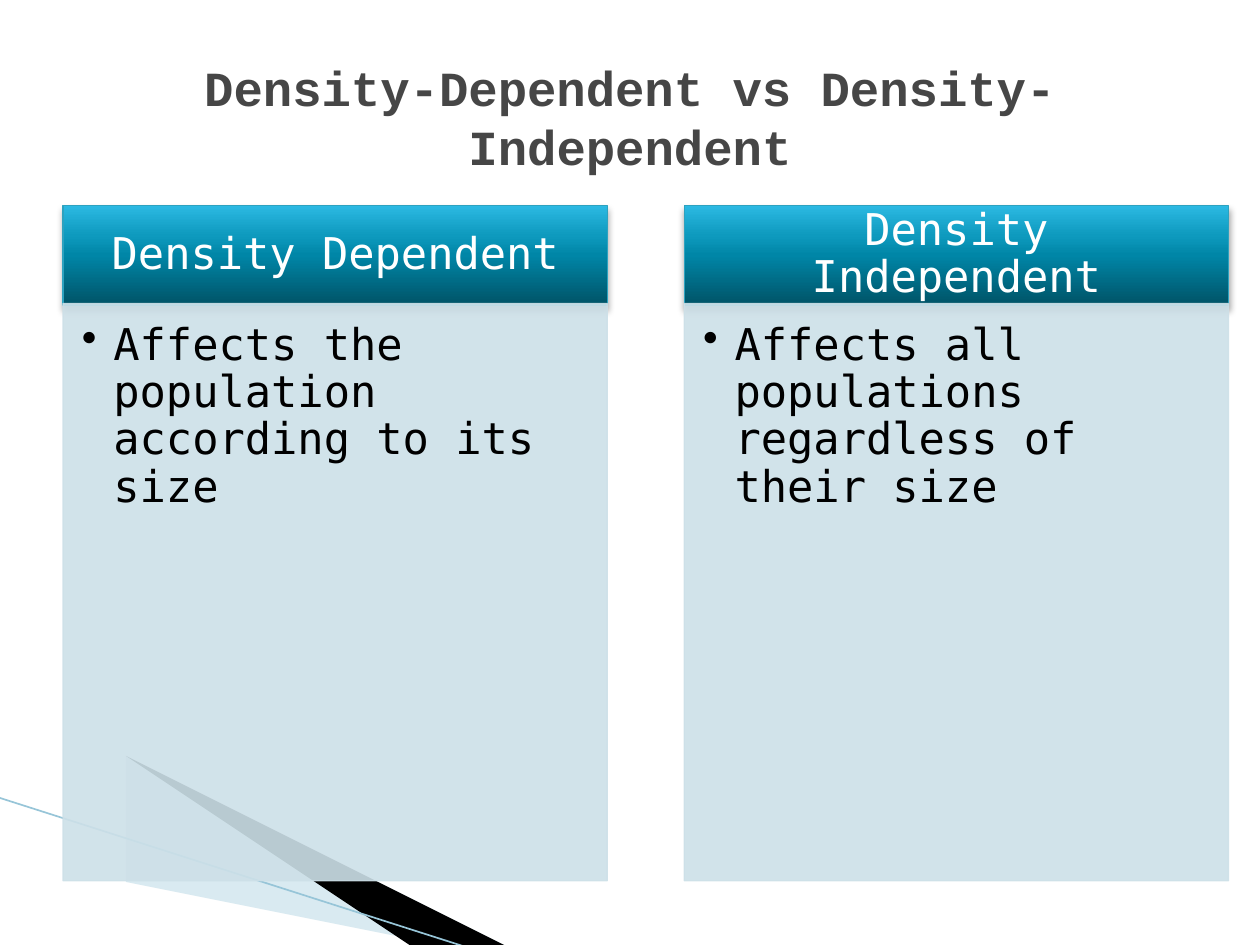
from dataclasses import dataclass

from lxml import etree
from pptx import Presentation, util as u
from pptx.dml.color import RGBColor
from pptx.enum import shapes, text
from pptx.oxml.ns import qn

WIDTH, HEIGHT = 10, 7.5
MONO = "DejaVu Sans Mono"

# Column grid, in inches
COLUMN_LEFT, COLUMN_STEP, COLUMN_WIDTH = 0.5, 4.93, 4.32
HEADER_TOP, HEADER_HEIGHT = 1.63, 0.79
BODY_TOP, BODY_HEIGHT = 2.41, 4.58
HEADER_STOPS = [(0, "005367"), (50, "0086A7"), (70, "0E9ABE"), (100, "2CB9E3")]


@dataclass
class Column:
    heading: str
    point: str


COLUMNS = [
    Column("Density Dependent", "Affects the population according to its size"),
    Column("Density Independent", "Affects all populations regardless of their size"),
]


def colour(value: str) -> RGBColor:
    return RGBColor.from_string(value)


def add_node(parent, tag: str, **attributes):
    return etree.SubElement(
        parent, qn(tag), {name: str(value) for name, value in attributes.items()})


def set_alpha(parent, percent: int) -> None:
    """Make the solid colour found inside parent partly transparent."""
    for node in parent.iter(qn("a:srgbClr")):
        add_node(node, "a:alpha", val=percent * 1000)


def set_gradient(shape, stops: list, angle: int) -> None:
    shape.fill.solid()
    solid = shape.element.spPr.find(qn("a:solidFill"))
    gradient = etree.Element(qn("a:gradFill"), rotWithShape="1")
    stop_list = add_node(gradient, "a:gsLst")
    for position, value in stops:
        stop = add_node(stop_list, "a:gs", pos=position * 1000)
        add_node(stop, "a:srgbClr", val=value)
    add_node(gradient, "a:lin", ang=angle * 60000, scaled=0)
    shape.element.spPr.replace(solid, gradient)


def set_shadow(shape) -> None:
    effects = shape.element.spPr.find(qn("a:effectLst"))
    shadow = add_node(effects, "a:outerShdw", blurRad=u.Pt(4), dist=u.Pt(3),
                      dir=90 * 60000, algn="ctr", rotWithShape=0)
    add_node(shadow, "a:srgbClr", val="000000")
    set_alpha(shadow, 35)


def write(shape, words: str, *, size: float, font: str, color: str,
          bold: bool = False, align=text.PP_ALIGN.CENTER,
          anchor=text.MSO_ANCHOR.MIDDLE, insets=(0.1, 0.05, 0.1, 0.05),
          spacing: float = 1.0, bullet: bool = False) -> None:
    frame = shape.text_frame
    frame.word_wrap = True
    frame.vertical_anchor = anchor
    (frame.margin_left, frame.margin_top,
     frame.margin_right, frame.margin_bottom) = map(u.Inches, insets)
    paragraph = frame.paragraphs[0]
    paragraph.alignment = align
    paragraph.line_spacing = spacing
    if bullet:
        properties = paragraph._p.get_or_add_pPr()
        properties.set("marL", str(u.Inches(0.25)))
        properties.set("indent", str(u.Inches(-0.25)))
        add_node(properties, "a:buChar", char="•")
    run = paragraph.add_run()
    run.text = words
    run.font.size, run.font.name, run.font.bold = u.Pt(size), font, bold
    run.font.color.rgb = colour(color)


def add_box(slide, left: float, top: float, height: float, line: str):
    shape = slide.shapes.add_shape(
        shapes.MSO_SHAPE.RECTANGLE, u.Inches(left), u.Inches(top),
        u.Inches(COLUMN_WIDTH), u.Inches(height))
    shape.shadow.inherit = False
    shape.line.color.rgb = colour(line)
    shape.line.width = u.Pt(0.75)
    return shape


def add_wedge(slide, points: list, fill: str, alpha: int = 100) -> None:
    builder = slide.shapes.build_freeform(*points[0], scale=u.Inches(1))
    builder.add_line_segments(points[1:], close=True)
    shape = builder.convert_to_shape()
    shape.shadow.inherit = False
    shape.fill.solid()
    shape.fill.fore_color.rgb = colour(fill)
    shape.line.fill.background()
    if alpha < 100:
        set_alpha(shape.element.spPr, alpha)


def add_corner(slide) -> None:
    add_wedge(slide, [(0.55, 6.51), (5.95, 7.51), (4.56, 7.51), (0.55, 6.5)],
              "A0CBDC", 40)
    add_wedge(slide, [(0.53, 6.49), (4.57, 7.51), (3.72, 7.52), (0.54, 6.5)],
              "000000")
    line = slide.shapes.add_connector(
        shapes.MSO_CONNECTOR.STRAIGHT,
        *map(u.Inches, (-0.01, 6.33, 3.71, 7.52)))
    line.line.color.rgb = colour("97C5D8")
    line.line.width = u.Pt(0.95)
    add_node(line.element.spPr, "a:effectLst")


def add_column(slide, index: int, column: Column) -> None:
    left = COLUMN_LEFT + index * COLUMN_STEP
    header = add_box(slide, left, HEADER_TOP, HEADER_HEIGHT, "2DA2BF")
    set_gradient(header, HEADER_STOPS, 270)
    set_shadow(header)
    write(header, column.heading, size=25, font=MONO, color="FFFFFF",
          insets=(0.19, 0.11, 0.19, 0.11), spacing=0.9)

    body = add_box(slide, left, BODY_TOP, BODY_HEIGHT, "CDE0E8")
    body.fill.solid()
    body.fill.fore_color.rgb = colour("CDE0E8")
    set_alpha(body.element.spPr, 90)
    write(body, column.point, size=25, font=MONO, color="000000",
          align=text.PP_ALIGN.LEFT, anchor=text.MSO_ANCHOR.TOP,
          insets=(0.15, 0.15, 0.19, 0.22), spacing=0.9, bullet=True)


def main() -> None:
    presentation = Presentation()
    presentation.slide_width = u.Inches(WIDTH)
    presentation.slide_height = u.Inches(HEIGHT)
    slide = presentation.slides.add_slide(presentation.slide_layouts[6])

    # Corner decoration, behind everything
    add_corner(slide)

    # Comparison columns
    for index, column in enumerate(COLUMNS):
        add_column(slide, index, column)

    # Title
    title = slide.shapes.add_textbox(
        u.Inches(0.05 * WIDTH), u.Inches(0.04 * HEIGHT),
        u.Inches(0.9 * WIDTH), u.Inches(1.25))
    write(title, "Density-Dependent vs Density-Independent", size=28,
          font="Courier New", color="464646", bold=True)

    presentation.save("out.pptx")


if __name__ == "__main__":
    main()
